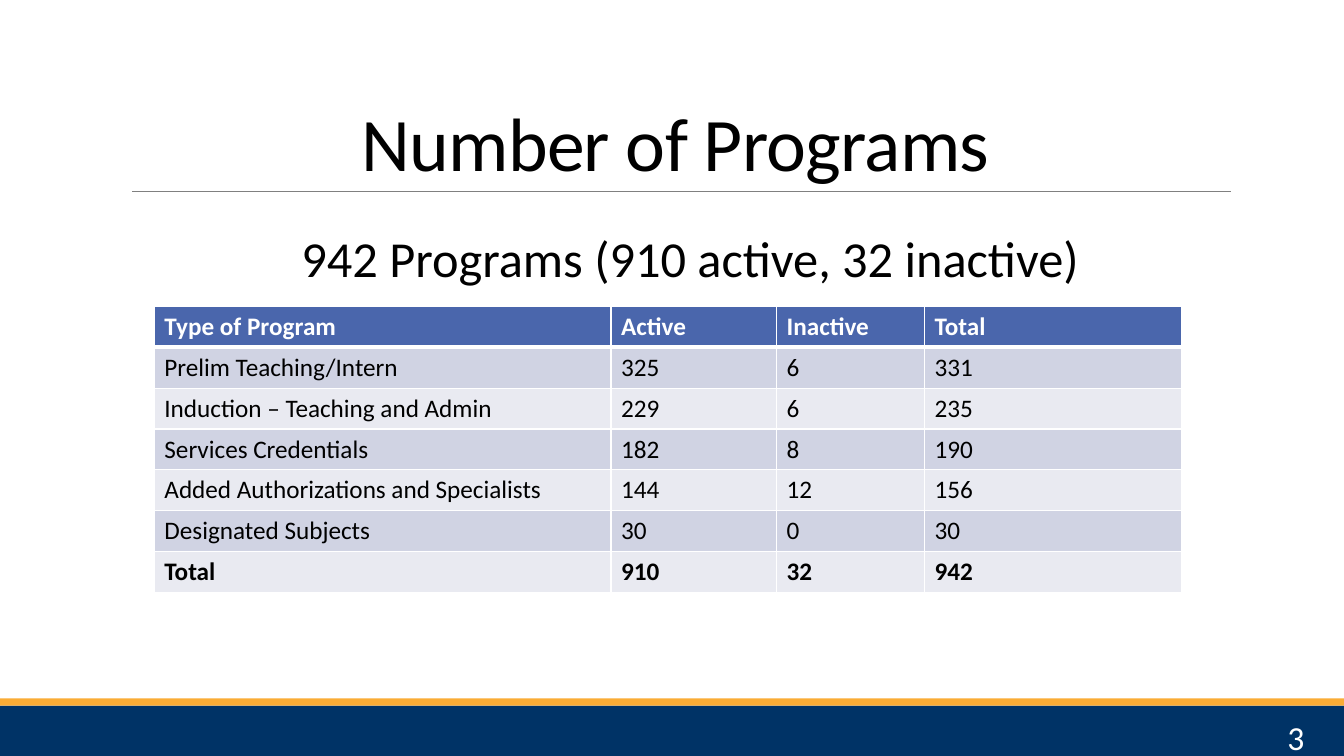
from dataclasses import dataclass

from lxml.etree import SubElement
from pptx import Presentation
from pptx.dml.color import RGBColor
from pptx.enum.shapes import MSO_CONNECTOR, MSO_SHAPE
from pptx.enum.text import MSO_ANCHOR as Anchor, PP_ALIGN as Align
from pptx.oxml.ns import qn
from pptx.util import Cm, Pt


@dataclass(frozen=True)
class Theme:
    font: str = "Calibri"
    black: str = "000000"
    white: str = "FFFFFF"
    navy: str = "003366"
    gold: str = "FAAC35"
    rule: str = "808080"
    header: str = "4A66AC"
    bands: tuple = ("D0D3E3", "E9EAF1")
    title_size: int = 54
    summary_size: int = 36
    number_size: int = 24
    table_size: int = 18


THEME = Theme()
SLIDE_WIDTH, SLIDE_HEIGHT = 33.87, 19.05
COLUMN_WIDTHS = (11.51, 4.17, 3.73, 6.48)
ROW_HEIGHT = 1.03
PROGRAMS = (
    ("Type of Program", "Active", "Inactive", "Total"),
    ("Prelim Teaching/Intern", "325", "6", "331"),
    ("Induction – Teaching and Admin", "229", "6", "235"),
    ("Services Credentials", "182", "8", "190"),
    ("Added Authorizations and Specialists", "144", "12", "156"),
    ("Designated Subjects", "30", "0", "30"),
    ("Total", "910", "32", "942"),
)


def write(frame, text, size, color=THEME.black, bold=False, align=Align.LEFT,
          line_spacing=None, tracking=None):
    paragraph = frame.paragraphs[0]
    paragraph.alignment = align
    if line_spacing:
        paragraph.line_spacing = line_spacing
    run = paragraph.add_run()
    run.text = text
    run.font.name = THEME.font
    run.font.size = Pt(size)
    run.font.bold = bold
    run.font.color.rgb = RGBColor.from_string(color)
    if tracking:
        run.font._element.set("spc", str(round(tracking * 100)))


def add_text(slide, box, text, size, anchor=Anchor.TOP, margins=(0.25, 0.25), **style):
    frame = slide.shapes.add_textbox(*map(Cm, box)).text_frame
    frame.word_wrap = True
    frame.vertical_anchor = anchor
    frame.margin_left, frame.margin_right = map(Cm, margins)
    write(frame, text, size, **style)


def add_band(slide, top, height, color):
    band = slide.shapes.add_shape(
        MSO_SHAPE.RECTANGLE, 0, Cm(top), Cm(SLIDE_WIDTH), Cm(height))
    band.shadow.inherit = False
    band.fill.solid()
    band.fill.fore_color.rgb = RGBColor.from_string(color)
    band.line.fill.background()


def add_rule(slide, left, right, y):
    rule = slide.shapes.add_connector(
        MSO_CONNECTOR.STRAIGHT, Cm(left), Cm(y), Cm(right), Cm(y))
    rule.line.color.rgb = RGBColor.from_string(THEME.rule)
    rule.line.width = Pt(0.5)
    SubElement(rule._element.spPr, qn("a:effectLst"))


def set_borders(cell, top, bottom):
    properties = cell._tc.get_or_add_tcPr()
    for side, width in (("L", 1), ("R", 1), ("T", top), ("B", bottom)):
        border = SubElement(properties, qn(f"a:ln{side}"), w=str(Pt(width)))
        fill = SubElement(border, qn("a:solidFill"))
        SubElement(fill, qn("a:srgbClr"), val=THEME.white)


def add_program_table(slide, left, top):
    table = slide.shapes.add_table(
        len(PROGRAMS), len(COLUMN_WIDTHS), Cm(left), Cm(top),
        Cm(sum(COLUMN_WIDTHS)), Cm(ROW_HEIGHT * len(PROGRAMS))).table
    for column, width in zip(table.columns, COLUMN_WIDTHS):
        column.width = Cm(width)
    for index, values in enumerate(PROGRAMS):
        table.rows[index].height = Cm(ROW_HEIGHT)
        is_header = index == 0
        is_total = index == len(PROGRAMS) - 1
        background = THEME.header if is_header else THEME.bands[(index - 1) % 2]
        for cell, value in zip(table.rows[index].cells, values):
            set_borders(cell, top=3 if index == 1 else 1, bottom=3 if is_header else 1)
            cell.fill.solid()
            cell.fill.fore_color.rgb = RGBColor.from_string(background)
            write(cell.text_frame, value, THEME.table_size,
                  color=THEME.white if is_header else THEME.black,
                  bold=is_header or is_total)


def main():
    deck = Presentation()
    deck.slide_width, deck.slide_height = Cm(SLIDE_WIDTH), Cm(SLIDE_HEIGHT)
    slide = deck.slides.add_slide(deck.slide_layouts[6])
    add_band(slide, 17.78, 1.27, THEME.navy)
    add_band(slide, 17.6, 0.18, THEME.gold)
    add_rule(slide, 3.33, 31.01, 4.83)
    add_text(slide, (3.05, 0.79, 27.94, 4.04), "Number of Programs", THEME.title_size,
             anchor=Anchor.BOTTOM, align=Align.CENTER, line_spacing=0.85, tracking=-0.5)
    add_text(slide, (3.05, 5.59, 28.37, 11.18), "942 Programs (910 active, 32 inactive)",
             THEME.summary_size, margins=(0.33, 0), align=Align.CENTER)
    add_program_table(slide, 3.89, 7.72)
    add_text(slide, (29.49, 17.93, 3.63, 1.02), "3", THEME.number_size,
             color=THEME.white, align=Align.RIGHT)
    deck.save("out.pptx")


if __name__ == "__main__":
    main()
